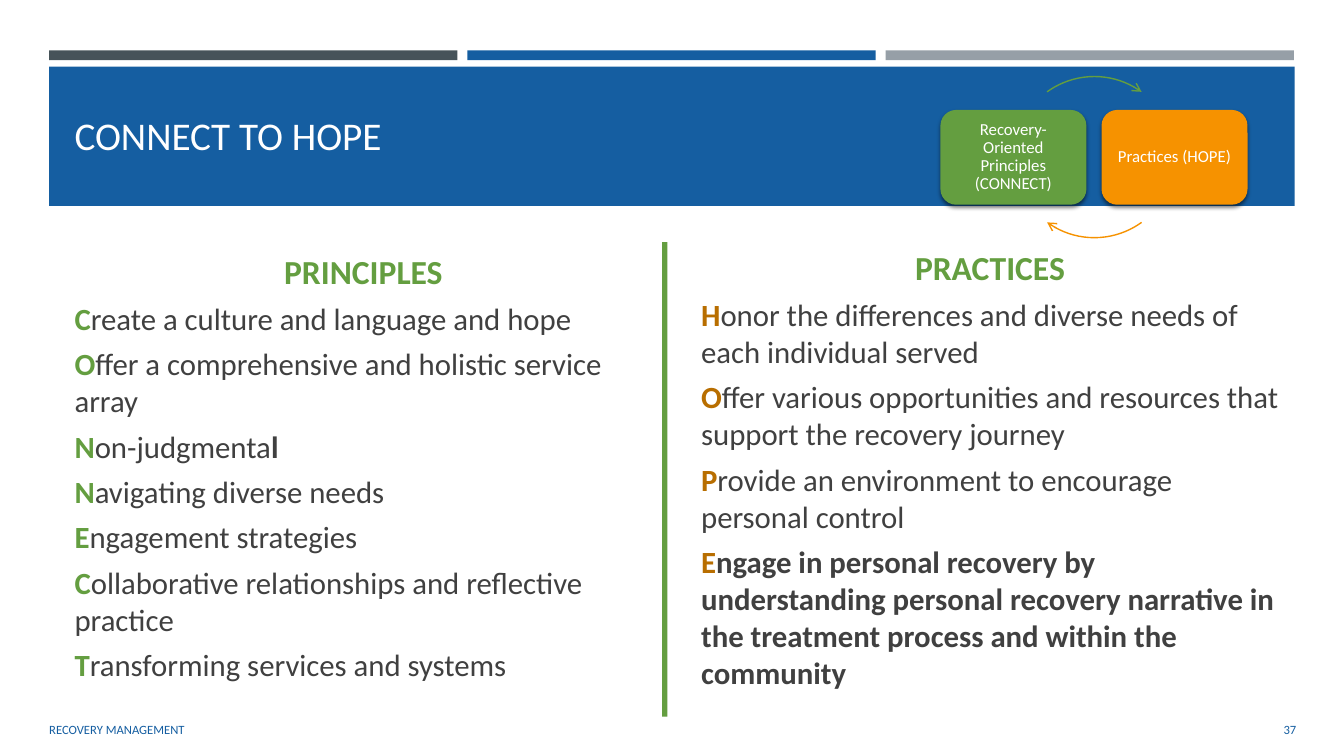
from lxml import etree
from pptx import Presentation
from pptx import util as u
from pptx.dml.color import RGBColor
from pptx.enum import shapes, text
from pptx.oxml import ns

HUES = {"slate": "465359", "blue": "155EA1", "gray": "969FA7", "green": "649E40",
        "orange": "F69200", "brown": "B86E00", "ink": "404040", "white": "FFFFFF"}
FONT = "Calibri"
BARS = ["slate", "blue", "gray"]
TITLE = "CONNECT TO HOPE"
FOOT = "RECOVERY MANAGEMENT"
PAGE = "37"
CARDS = [("Recovery-Oriented Principles (CONNECT)", "green", 234.1, 305.9),
         ("Practices (HOPE)", "orange", 54.1, 125.9)]
LISTS = [
    {"head": "PRINCIPLES", "left": 1.63, "hue": "green", "lead": 1.1, "rows": [
        ("C", "reate a culture and language and hope", ""),
        ("O", "ffer a comprehensive and holistic service array", ""),
        ("N", "on-judgmenta", "l"),
        ("N", "avigating diverse needs", ""),
        ("E", "ngagement strategies", ""),
        ("C", "ollaborative relationships and reflective practice", ""),
        ("T", "ransforming services and systems", "")]},
    {"head": "PRACTICES", "left": 17.42, "hue": "brown", "lead": 1.0, "rows": [
        ("H", "onor the differences and diverse needs of each individual served", ""),
        ("O", "ffer various opportunities and resources that support the recovery journey", ""),
        ("P", "rovide an environment to encourage personal control", ""),
        ("E", "", "ngage in personal recovery by understanding personal recovery narrative"
                  " in the treatment process and within the community")]},
]

LEFT, CENTER, RIGHT = (text.PP_ALIGN.LEFT, text.PP_ALIGN.CENTER, text.PP_ALIGN.RIGHT)
MID, TOP = text.MSO_ANCHOR.MIDDLE, text.MSO_ANCHOR.TOP
KIND = shapes.MSO_SHAPE

deck = Presentation()
deck.slide_width, deck.slide_height = u.Cm(33.87), u.Cm(19.05)
slide = deck.slides.add_slide(deck.slide_layouts[6])


def put(item, **vals):
    for key, val in vals.items():
        setattr(item, key, val)


def rgb(hue):
    return RGBColor.from_string(HUES[hue])


def node(root, tag, **vals):
    return etree.SubElement(root, ns.qn(tag), vals)


def draw(kind, box, hue):
    shape = slide.shapes.add_shape(kind, *map(u.Cm, box))
    shape.shadow.inherit = False
    shape.fill.solid()
    shape.fill.fore_color.rgb = rgb(hue)
    shape.line.fill.background()
    return shape


def frame(box, anchor):
    body = slide.shapes.add_textbox(*map(u.Cm, box)).text_frame
    put(body, word_wrap=True, vertical_anchor=anchor)
    return body


def write(para, words, size, hue, bold=False):
    run = para.add_run()
    run.text = words
    put(run.font, name=FONT, size=u.Pt(size), bold=bold)
    run.font.color.rgb = rgb(hue)


def label(box, words, size, hue, align):
    para = frame(box, MID).paragraphs[0]
    para.alignment = align
    write(para, words, size, hue)


def column(data):
    body = frame((data["left"], 6.1, 15.06, 12.34), TOP)
    para = body.paragraphs[0]
    put(para, alignment=CENTER, space_after=u.Pt(6), line_spacing=data["lead"])
    write(para, data["head"], 24, "green", True)
    for first, plain, strong in data["rows"]:
        para = body.add_paragraph()
        put(para, alignment=LEFT, space_after=u.Pt(6))
        write(para, first, 22, data["hue"], True)
        for words, bold in ((plain, False), (strong, True)):
            if words:
                write(para, words, 22, "ink", bold)


def card(spot, words, hue):
    shape = draw(KIND.ROUNDED_RECTANGLE, (23.7 + 4.06 * spot, 2.77, 3.68, 2.39), hue)
    glow = node(shape._element.spPr.find(ns.qn("a:effectLst")), "a:outerShdw",
                blurRad=str(u.Pt(3)), dist=str(u.Pt(2)), dir="5400000", rotWithShape="0")
    node(node(glow, "a:srgbClr", val="000000"), "a:alpha", val="55000")
    body, pad = shape.text_frame, u.Cm(0.13)
    put(body, word_wrap=True, vertical_anchor=MID, margin_left=pad,
        margin_right=pad, margin_top=pad, margin_bottom=pad)
    para = body.paragraphs[0]
    put(para, alignment=CENTER, line_spacing=0.9)
    write(para, words, 12, "white")


def curve(hue, start, end):
    arc = draw(KIND.ARC, (25.55, 1.93, 4.06, 4.06), hue)
    arc.fill.background()
    for spot, angle in enumerate((start, end)):
        arc.adjustments[spot] = angle * 0.6
    arc.line.color.rgb = rgb(hue)
    arc.line.width = u.Pt(1)
    node(arc.line._get_or_add_ln(), "a:tailEnd", type="arrow")


for spot, hue in enumerate(BARS):
    draw(KIND.RECTANGLE, (1.24 + 10.54 * spot, 1.27, 10.29, 0.25), hue)
draw(KIND.RECTANGLE, (1.24, 1.68, 31.39, 3.51), "blue")
label((30, 17.86, 2.92, 1.02), PAGE, 9, "blue", RIGHT)
label((0.99, 17.86, 18.95, 1.02), FOOT, 9, "blue", LEFT)
label((1.63, 2.03, 30.63, 2.74), TITLE, 28, "white", LEFT)
for data in LISTS:
    column(data)
draw(KIND.RECTANGLE, (16.69, 6.1, 0.13, 11.96), "green")
for spot, (words, hue, start, end) in enumerate(CARDS):
    card(spot, words, hue)
    curve(hue, start, end)

deck.save("out.pptx")
